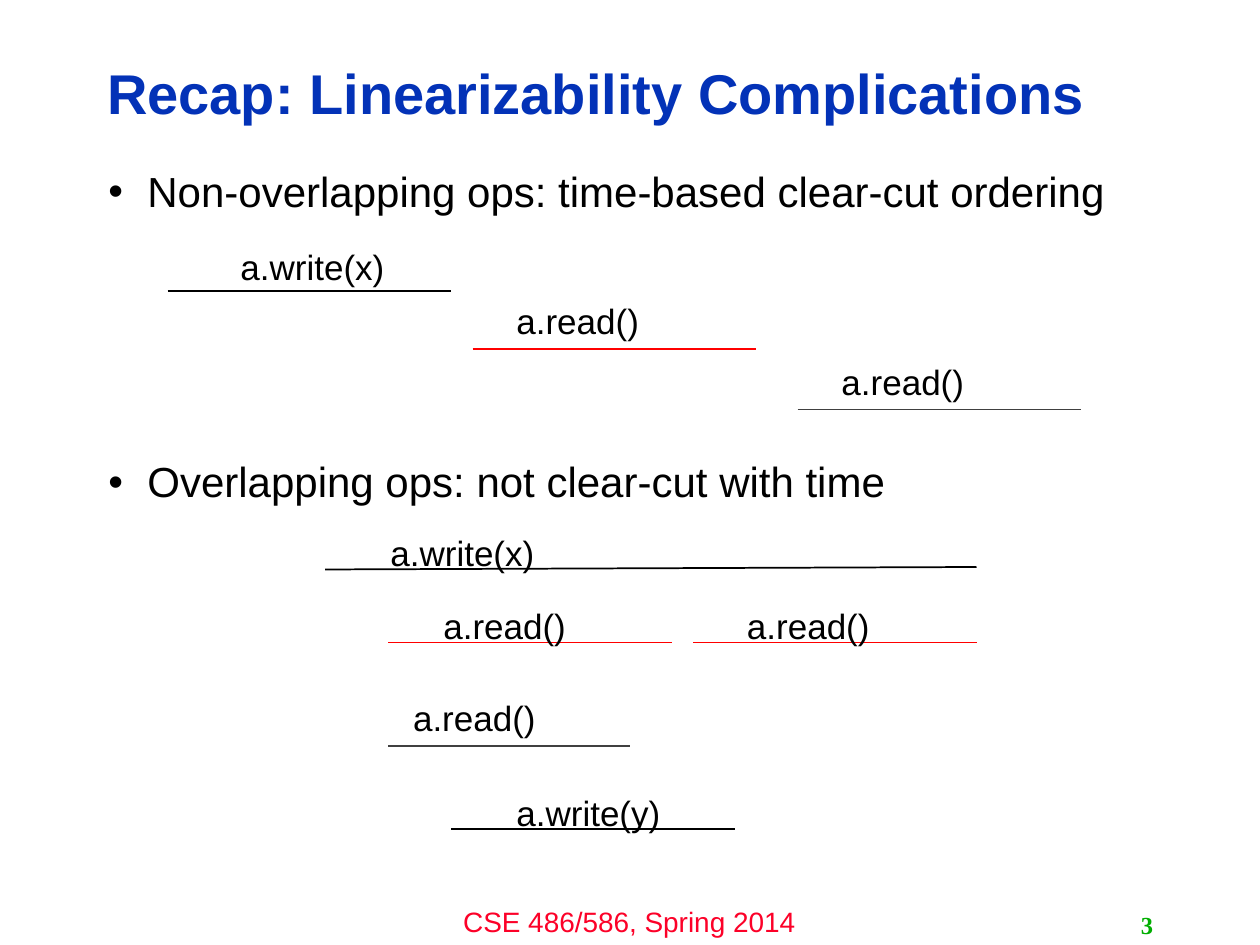
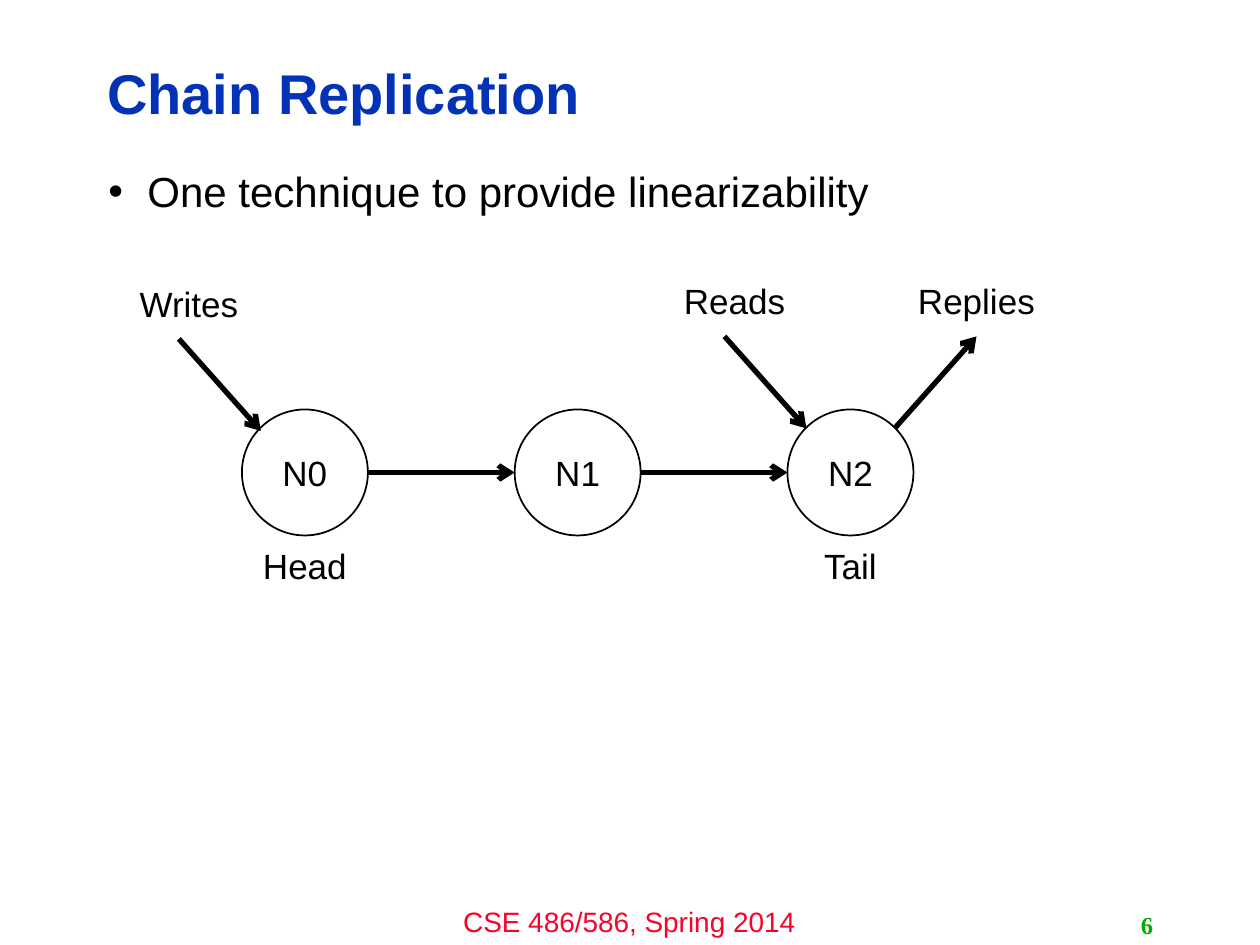
from collections import namedtuple

from pptx import Presentation
from pptx.dml.color import RGBColor
from pptx.enum.shapes import MSO_CONNECTOR as Connector, MSO_SHAPE as Shape
from pptx.enum.text import MSO_ANCHOR as Anchor, MSO_AUTO_SIZE as AutoSize, PP_ALIGN as Align
from pptx.oxml.ns import qn
from pptx.util import Inches, Pt
from lxml import etree

COLORS = {
    "paper": "FFFFFF",
    "ink": "000000",
    "title": "0332B7",
    "footer": "FC0128",
    "number": "00AE00",
    "read": "FF0000",
    "late_read": "404040",
}
FONT = "Arial"
NUMBER_FONT = "Times New Roman"
LABEL_HEIGHT = 0.44

Box = namedtuple("Box", "left top width height")


def color(name):
    return RGBColor.from_string(COLORS[name])


def place(shape, box):
    shape.left, shape.top, shape.width, shape.height = map(Inches, box)


def write(frame, *lines, size=20, ink="ink", font=FONT, bold=False, align=Align.LEFT,
          anchor=Anchor.TOP, wrap=True, line_spacing=None, gap=0, bullet=False):
    """Fill a text frame, one paragraph a line; gap is the space between them in points."""
    frame.auto_size = AutoSize.NONE
    frame.word_wrap = wrap
    frame.vertical_anchor = anchor
    frame.margin_left = frame.margin_right = Inches(0.1)
    frame.margin_top = frame.margin_bottom = Inches(0.05)
    for index, line in enumerate(lines):
        para = frame.add_paragraph() if index else frame.paragraphs[0]
        if bullet:
            add_bullet(para)
        para.alignment = align
        para.line_spacing = line_spacing
        para.space_before = Pt(gap if index else 0)
        span = para.add_run()
        span.text = line
        span.font.name = font
        span.font.size = Pt(size)
        span.font.bold = bold
        span.font.color.rgb = color(ink)


def add_bullet(para):
    properties = para._p.get_or_add_pPr()
    properties.set("marL", str(Inches(0.31)))
    properties.set("indent", str(-Inches(0.31)))
    etree.SubElement(properties, qn("a:buFont")).set("typeface", FONT)
    etree.SubElement(properties, qn("a:buChar")).set("char", "•")


def add_text(page, box, text, **style):
    label = page.shapes.add_textbox(*map(Inches, box))
    write(label.text_frame, text, **style)


def add_line(page, start, end, ink="ink", width=1, arrow=False):
    line = page.shapes.add_connector(Connector.STRAIGHT, *map(Inches, (*start, *end)))
    line.line.color.rgb = color(ink)
    line.line.width = Pt(width)
    if arrow:
        etree.SubElement(line.line._get_or_add_ln(), qn("a:tailEnd")).set("type", "arrow")
    etree.SubElement(line._element.spPr, qn("a:effectLst"))


def add_page(deck, title, bullets, number, gap=0):
    """Add a slide with the shared title, list, footer and page number."""
    page = deck.slides.add_slide(deck.slide_layouts[1])
    heading, body = page.placeholders
    place(heading, Box(0.75, 0.36, 7.98, 0.81))
    write(heading.text_frame, title, size=32, ink="title", bold=True,
          anchor=Anchor.MIDDLE, line_spacing=0.9)
    place(body, Box(0.76, 1.31, 8.4, 5.39))
    write(body.text_frame, *bullets, size=24, line_spacing=0.9, gap=gap, bullet=True)
    add_text(page, Box(3.33, 7.13, 3.33, 0.37), "CSE 486/586, Spring 2014",
             size=16, ink="footer", align=Align.CENTER)
    add_text(page, Box(7.17, 7.18, 2.08, 0.32), str(number), size=14, ink="number",
             font=NUMBER_FONT, bold=True, align=Align.RIGHT, anchor=Anchor.MIDDLE)
    return page


def add_timeline(page, box, operations):
    """Draw operations given as name, label offset, line start, line end and colour."""
    for name, (label_x, label_y), start, end, ink in operations:
        add_line(page, *[(box.left + x, box.top + y) for x, y in (start, end)], ink=ink)
        width = 1.36 if "write" in name else 1.18
        add_text(page, Box(box.left + label_x, box.top + label_y, width, LABEL_HEIGHT),
                 name, wrap=False)


def add_node(page, box, name):
    node = page.shapes.add_shape(Shape.OVAL, *map(Inches, box))
    node.shadow.inherit = False
    node.fill.solid()
    node.fill.fore_color.rgb = color("paper")
    node.line.color.rgb = color("ink")
    node.line.width = Pt(1)
    write(node.text_frame, name, align=Align.CENTER, anchor=Anchor.MIDDLE)


def add_chain(page, box, names):
    """Draw a row of linked nodes across the box, with its traffic and end labels."""
    size = box.height
    step = (box.width - size) / (len(names) - 1)
    lefts = [box.left + index * step for index in range(len(names))]
    middle = box.top + size / 2
    for left, name in zip(lefts, names):
        add_node(page, Box(left, box.top, size, size), name)
    for left, following in zip(lefts, lefts[1:]):
        add_line(page, (left + size, middle), (following, middle), width=3, arrow=True)

    head, tail = lefts[0], lefts[-1]
    far, near = (-0.5, -0.58), (0.15, 0.15)
    right_near, right_far = (size - 0.15, 0.15), (size + 0.5, -0.58)
    traffic = [
        ("Writes", head, 0.02, -1.17, far, near),
        ("Reads", tail, 0, -1.17, far, near),
        ("Replies", tail, 0, 0.75, right_near, right_far),
    ]
    for text, left, drop, label_x, start, end in traffic:
        top = box.top + drop
        add_line(page, *[(left + x, top + y) for x, y in (start, end)], width=3, arrow=True)
        add_text(page, Box(left + label_x, top - 1.08, 1.5, LABEL_HEIGHT), text,
                 align=Align.CENTER)
    for text, left in (("Head", head), ("Tail", tail)):
        add_text(page, Box(left - 0.25, box.top + size + 0.02, 1.5, LABEL_HEIGHT), text,
                 align=Align.CENTER)


def build_complications(deck):
    page = add_page(deck, "Recap: Linearizability Complications",
                    ["Non-overlapping ops: time-based clear-cut ordering",
                     "Overlapping ops: not clear-cut with time"], 3, gap=140)
    add_timeline(page, Box(1.33, 1.9, 7.25, 1.35), [
        ("a.write(x)", (0.48, 0), (0, 0.41), (2.25, 0.41), "ink"),
        ("a.read()", (2.67, 0.43), (2.42, 0.87), (4.67, 0.87), "read"),
        ("a.read()", (5.25, 0.91), (5, 1.35), (7.25, 1.35), "late_read"),
    ])
    add_timeline(page, Box(2.58, 4.17, 5.17, 2.5), [
        ("a.write(x)", (0.42, 0), (0, 0.35), (5.17, 0.33), "ink"),
        ("a.read()", (0.84, 0.58), (0.5, 0.93), (2.75, 0.93), "read"),
        ("a.read()", (3.25, 0.58), (2.92, 0.93), (5.17, 0.93), "read"),
        ("a.read()", (0.6, 1.31), (0.5, 1.75), (2.42, 1.75), "late_read"),
        ("a.write(y)", (1.42, 2.06), (1, 2.41), (3.25, 2.41), "ink"),
    ])


def build_chain_replication(deck):
    page = add_page(deck, "Chain Replication",
                    ["One technique to provide linearizability"], 6)
    add_chain(page, Box(1.92, 3.25, 5.33, 1), ["N0", "N1", "N2"])


def main():
    deck = Presentation()
    deck.slide_width, deck.slide_height = Inches(10), Inches(7.5)
    build_complications(deck)
    build_chain_replication(deck)
    deck.save("out.pptx")


if __name__ == "__main__":
    main()
